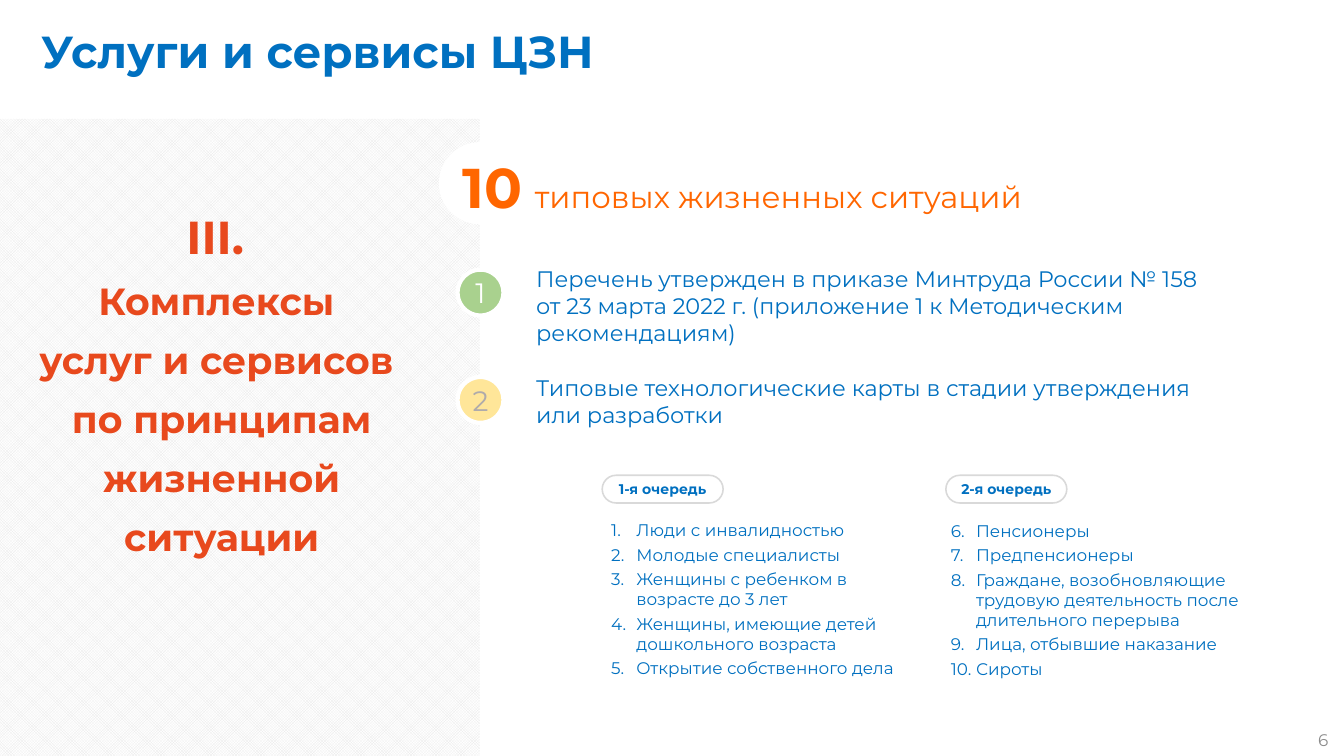
from lxml.etree import SubElement
from pptx import Presentation
from pptx.dml.color import RGBColor
from pptx.enum.dml import MSO_PATTERN
from pptx.enum.shapes import MSO_SHAPE
from pptx.enum.text import MSO_ANCHOR, MSO_AUTO_SIZE, PP_ALIGN
from pptx.oxml.ns import qn
from pptx.util import Inches, Pt

FONT = "Montserrat"
BLUE, ORANGE, RED, WHITE = "0070C0", "FF6600", "E8491D", "FFFFFF"

TITLE = "Услуги и сервисы ЦЗН"
PAGE_NUMBER = "6"
PANEL_TEXT = (
    "III. \vКомплексы \vуслуг и сервисов \vпо принципам жизненной ситуации"
)
HEADLINE = [("10", 80, True), (" ", 66, False), ("типовых жизненных ситуаций", 44, False)]
POINTS = [
    {"number": "1", "fill": "A9D18E", "color": WHITE, "circle_top": 5.35,
     "box_top": 5.22, "height": 1.72,
     "text": "Перечень утвержден в приказе Минтруда России № 158 \v"
             "от 23 марта 2022 г. (приложение 1 к Методическим рекомендациям)"},
    {"number": "2", "fill": "FFE699", "color": "AFABAB", "circle_top": 7.48,
     "box_top": 7.37, "height": 1.18,
     "text": "Типовые технологические карты в стадии утверждения \vили разработки"},
]
QUEUES = [
    {"label": "1-я очередь", "pill_left": 11.95, "list_box": (12.03, 10.27, 5.91, 3.26),
     "items": ["Люди с инвалидностью", "Молодые специалисты",
               "Женщины с ребенком в возрасте до 3 лет",
               "Женщины, имеющие детей дошкольного возраста",
               "Открытие собственного дела"]},
    {"label": "2-я очередь", "pill_left": 18.77, "list_box": (18.77, 10.28, 5.94, 3.26),
     "items": ["Пенсионеры", "Предпенсионеры",
               "Граждане, возобновляющие трудовую деятельность после длительного перерыва",
               "Лица, отбывшие наказание", "Сироты"]},
]


def rgb(value):
    return RGBColor.from_string(value)


def add_shape(kind, box, fill=None, line=None, line_width=0, corner=None):
    shape = slide.shapes.add_shape(kind, *map(Inches, box))
    shape.shadow.inherit = False
    if corner is not None:
        shape.adjustments[0] = corner
    if fill:
        shape.fill.solid()
        shape.fill.fore_color.rgb = rgb(fill)
    else:
        shape.fill.background()
    if line:
        shape.line.color.rgb = rgb(line)
        shape.line.width = Pt(line_width)
    else:
        shape.line.fill.background()
    return shape


def add_box(box):
    return slide.shapes.add_textbox(*map(Inches, box))


def style_run(run, size, color, bold=False):
    run.font.name = FONT
    run.font.size = Pt(size)
    run.font.bold = bold
    run.font.color.rgb = rgb(color)


def set_text(shape, text, size, color, bold=False, align=PP_ALIGN.LEFT, middle=False):
    frame = shape.text_frame
    frame.word_wrap = True
    frame.vertical_anchor = MSO_ANCHOR.MIDDLE if middle else MSO_ANCHOR.TOP
    frame.auto_size = MSO_AUTO_SIZE.NONE if middle else MSO_AUTO_SIZE.SHAPE_TO_FIT_TEXT
    frame.text = text
    for paragraph in frame.paragraphs:
        paragraph.alignment = align
        for run in paragraph.runs:
            style_run(run, size, color, bold)
    return frame


def number_paragraph(paragraph, start):
    paragraph.space_after = Pt(6)
    properties = paragraph._p.get_or_add_pPr()
    properties.set("marL", str(Inches(0.5)))
    properties.set("indent", str(-Inches(0.5)))
    SubElement(properties, qn("a:buFont"), typeface="+mj-lt")
    SubElement(properties, qn("a:buAutoNum"), type="arabicPeriod", startAt=str(start))


presentation = Presentation()
presentation.slide_width = Inches(26.67)
presentation.slide_height = Inches(15)
slide = presentation.slides.add_slide(presentation.slide_layouts[6])

panel = add_shape(MSO_SHAPE.RECTANGLE, (-1.56, 3.92, 12.64, 9.52))
panel.rotation = 270
panel.fill.patterned()
panel.fill.pattern = MSO_PATTERN.OUTLINED_DIAMOND
panel.fill.fore_color.rgb = rgb("E6E6E6")
panel.fill.back_color.rgb = rgb(WHITE)

set_text(add_box((0.72, 0.42, 24.22, 1.18)), TITLE, 64, BLUE, bold=True)
set_text(add_box((20.46, 14.43, 6, 0.51)), PAGE_NUMBER, 24, "8C8C8C",
         align=PP_ALIGN.RIGHT, middle=True)

panel_label = add_shape(MSO_SHAPE.ROUNDED_RECTANGLE, (0.52, 3.73, 7.76, 7.34), corner=0.012)
panel_paragraph = set_text(panel_label, PANEL_TEXT, 54, RED, True, PP_ALIGN.CENTER).paragraphs[0]
panel_paragraph.line_spacing = 1.3
panel_paragraph.runs[0].font.size = Pt(66)

for point in reversed(POINTS):
    circle = add_shape(MSO_SHAPE.OVAL, (9.08, point["circle_top"], 0.91, 0.91),
                       point["fill"], WHITE, 6)
    set_text(circle, point["number"], 40, point["color"], align=PP_ALIGN.CENTER, middle=True)

for point in POINTS:
    set_text(add_box((10.54, point["box_top"], 14.4, point["height"])), point["text"], 32, BLUE)

first_number = 1
for queue in QUEUES:
    frame = set_text(add_box(queue["list_box"]), "\n".join(queue["items"]), 24, BLUE)
    for paragraph in frame.paragraphs:
        number_paragraph(paragraph, first_number)
    first_number += len(queue["items"])

for queue in QUEUES:
    pill = add_shape(MSO_SHAPE.ROUNDED_RECTANGLE, (queue["pill_left"], 9.43, 2.4, 0.55),
                     line="D9D9D9", line_width=2.25, corner=0.5)
    set_text(pill, queue["label"], 20, BLUE, True, PP_ALIGN.CENTER, middle=True)

add_shape(MSO_SHAPE.OVAL, (8.74, 2.85, 1.57, 1.57), WHITE, WHITE, 4.5)
headline = add_shape(MSO_SHAPE.ROUNDED_RECTANGLE, (9.08, 2.98, 14.68, 1.45), corner=0.012)
headline_paragraph = set_text(headline, "", 44, ORANGE).paragraphs[0]
for text, size, bold in HEADLINE:
    run = headline_paragraph.add_run()
    run.text = text
    style_run(run, size, ORANGE, bold)

presentation.save("out.pptx")
